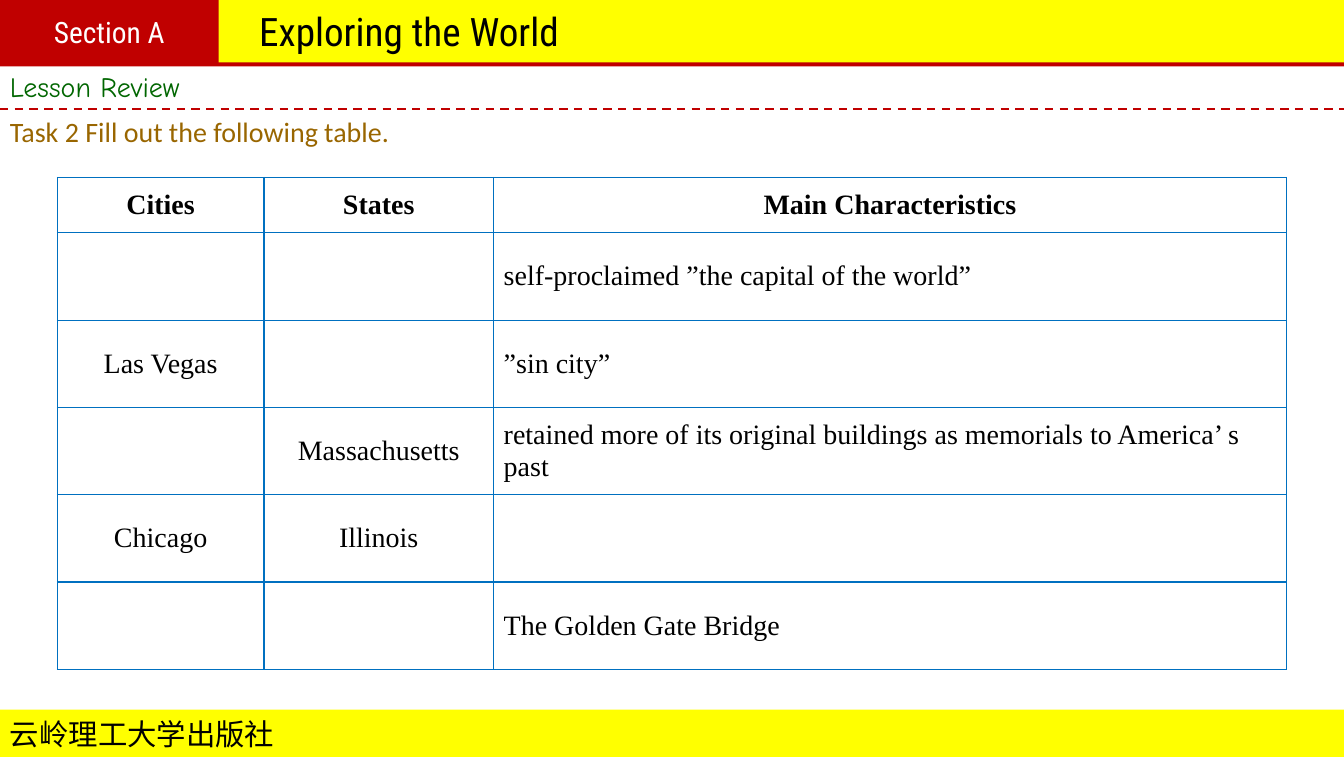
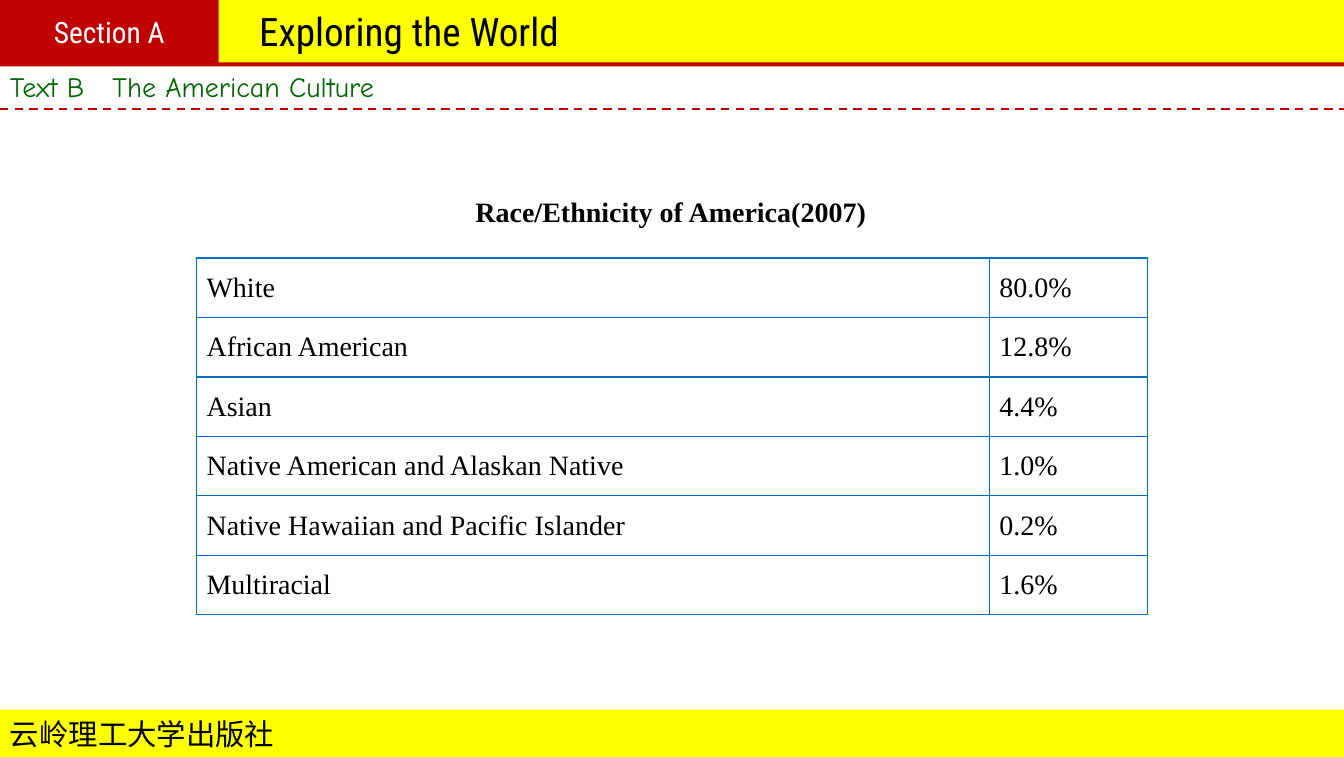
from lxml import etree
from pptx import Presentation
from pptx.dml.color import RGBColor
from pptx.enum.dml import MSO_LINE
from pptx.enum.shapes import MSO_CONNECTOR, MSO_SHAPE
from pptx.enum.text import MSO_ANCHOR, MSO_AUTO_SIZE, PP_ALIGN
from pptx.oxml.ns import qn
from pptx.util import Inches, Pt

SLIDE_W, SLIDE_H = 13.34, 7.51
HEADER_H, FOOTER_H, RULE_Y = 0.63, 0.47, 1.08
TITLE_BOX = (2.37, 0.01, 3.38, 0.59)

YELLOW = RGBColor(0xFF, 0xFF, 0x00)
RED = RGBColor(0xC0, 0x00, 0x00)
GREEN = RGBColor(0x00, 0x66, 0x00)
BROWN = RGBColor(0x99, 0x66, 0x00)
BLUE = RGBColor(0x00, 0x70, 0xC0)
BLACK = RGBColor(0x00, 0x00, 0x00)
WHITE = RGBColor(0xFF, 0xFF, 0xFF)

HEADER_FONT = "Roboto Condensed"
SUBTITLE_FONT = "Comic Neue"
TABLE_FONT = "Times New Roman"

CITY_ROWS = [
    ("Cities", "States", "Main Characteristics"),
    ("", "", "self-proclaimed ”the capital of the world”"),
    ("Las Vegas", "", "”sin city”"),
    ("", "Massachusetts",
     "retained more of its original buildings as memorials to America’ s past"),
    ("Chicago", "Illinois", ""),
    ("", "", "The Golden Gate Bridge"),
]
ETHNICITY_ROWS = [
    ("White", "80.0%"),
    ("African American", "12.8%"),
    ("Asian", "4.4%"),
    ("Native American and Alaskan Native", "1.0%"),
    ("Native Hawaiian and Pacific Islander", "0.2%"),
    ("Multiracial", "1.6%"),
]


def inches(box):
    return [Inches(length) for length in box]


def write(frame, text, size, font, color, bold=False, align=PP_ALIGN.LEFT):
    frame.text = text
    paragraph = frame.paragraphs[0]
    paragraph.alignment = align
    style = paragraph.font if not paragraph.runs else paragraph.runs[0].font
    style.size, style.name, style.bold = Pt(size), font, bold
    style.color.rgb = color


def add_band(slide, box, color):
    band = slide.shapes.add_shape(MSO_SHAPE.RECTANGLE, *inches(box))
    band.shadow.inherit = False
    band.fill.solid()
    band.fill.fore_color.rgb = color
    band.line.fill.background()
    band.text_frame.vertical_anchor = MSO_ANCHOR.MIDDLE
    return band


def add_label(slide, box, text, font, color, bold=False, wrap=False):
    frame = slide.shapes.add_textbox(*inches(box)).text_frame
    frame.word_wrap = wrap
    frame.auto_size = MSO_AUTO_SIZE.SHAPE_TO_FIT_TEXT
    write(frame, text, 20, font, color, bold)


def prepare_layout(layout):
    """Keep only the title placeholder and put it in the header."""
    for placeholder in list(layout.placeholders):
        if placeholder.placeholder_format.idx != 0:
            placeholder.element.getparent().remove(placeholder.element)
    title = layout.placeholders[0]
    title.left, title.top, title.width, title.height = inches(TITLE_BOX)


def add_frame_to_layout(slide):
    """Draw the bands and the dashed rule, then hand them to the layout."""
    footer = add_band(slide, (0, SLIDE_H - FOOTER_H, SLIDE_W, FOOTER_H), YELLOW)
    write(footer.text_frame, "云岭理工大学出版社", 21, "Arial", BLACK)
    header = add_band(slide, (0, 0, SLIDE_W, HEADER_H), YELLOW)
    header_edge = add_band(slide, (0, 0.62, SLIDE_W, 0.04), RED)
    rule = slide.shapes.add_connector(
        MSO_CONNECTOR.STRAIGHT, *inches((0, RULE_Y, SLIDE_W, RULE_Y)))
    rule.line.color.rgb = RED
    rule.line.width = Pt(1.5)
    rule.line.dash_style = MSO_LINE.DASH
    etree.SubElement(rule.element.spPr, qn("a:effectLst"))
    layout_tree = slide.slide_layout.shapes.element
    for part in (footer, header, header_edge, rule):
        layout_tree.append(part.element)


def add_header(slide, section, title, subtitle, subtitle_w):
    frame = slide.shapes.title.text_frame
    write(frame, title, 28, HEADER_FONT, BLACK, align=PP_ALIGN.CENTER)
    frame.vertical_anchor = MSO_ANCHOR.MIDDLE
    frame.word_wrap = False
    frame.auto_size = MSO_AUTO_SIZE.SHAPE_TO_FIT_TEXT
    frame.margin_left = frame.margin_right = Inches(0.12)
    frame.margin_top = frame.margin_bottom = Inches(0.06)
    section_tab = add_band(slide, (0, 0, 2.17, HEADER_H), RED)
    write(section_tab.text_frame, section, 21, HEADER_FONT, WHITE,
          align=PP_ALIGN.CENTER)
    add_label(slide, (0, 0.64, subtitle_w, 0.44), subtitle, SUBTITLE_FONT, GREEN)


def set_borders(cell, color, width):
    properties = cell._tc.get_or_add_tcPr()
    for position, side in enumerate(("a:lnL", "a:lnR", "a:lnT", "a:lnB")):
        border = etree.Element(qn(side), w=str(Pt(width)))
        fill = etree.SubElement(border, qn("a:solidFill"))
        etree.SubElement(fill, qn("a:srgbClr"), val=str(color))
        properties.insert(position, border)


def add_ruled_table(slide, box, rows, column_widths, header_h=None,
                    centered_columns=()):
    """Place a white table; header_h gives the first row its own height and bold text."""
    has_header = header_h is not None
    table = slide.shapes.add_table(
        len(rows), len(column_widths), *inches(box)).table
    table.first_row = table.horz_banding = False
    for column, width in zip(table.columns, column_widths):
        column.width = Inches(width)
    body_h = (box[3] - (header_h or 0)) / (len(rows) - has_header)
    for row_index, texts in enumerate(rows):
        is_header = has_header and row_index == 0
        table.rows[row_index].height = Inches(header_h if is_header else body_h)
        for column_index, text in enumerate(texts):
            cell = table.cell(row_index, column_index)
            centered = is_header or column_index in centered_columns
            write(cell.text_frame, text, 20, TABLE_FONT, BLACK, is_header,
                  PP_ALIGN.CENTER if centered else PP_ALIGN.LEFT)
            cell.vertical_anchor = MSO_ANCHOR.MIDDLE
            cell.fill.solid()
            cell.fill.fore_color.rgb = WHITE
            set_borders(cell, BLUE, 1)


def build_review_slide(slide):
    add_header(slide, "Section A", "Exploring the World", "Lesson Review", 2.05)
    add_label(slide, (0, 1.09, SLIDE_W, 0.44),
              "Task 2 Fill out the following table.", "Calibri", BROWN, wrap=True)
    add_ruled_table(slide, (0.57, 1.76, 12.2, 4.88), CITY_ROWS,
                    (2.05, 2.28, 7.87), header_h=0.55, centered_columns=(0, 1))


def build_culture_slide(slide):
    add_header(slide, "Section A", "Exploring the World",
               "Text B　The American Culture", 4.24)
    add_label(slide, (4.62, 1.88, 4.11, 0.44),
              "Race/Ethnicity of America(2007)", TABLE_FONT, BLACK, bold=True)
    add_ruled_table(slide, (1.95, 2.56, 9.45, 3.54), ETHNICITY_ROWS, (7.87, 1.57))


def main():
    deck = Presentation()
    deck.slide_width, deck.slide_height = Inches(SLIDE_W), Inches(SLIDE_H)
    layout = deck.slide_layouts.get_by_name("Title Only")
    prepare_layout(layout)
    review_slide = deck.slides.add_slide(layout)
    culture_slide = deck.slides.add_slide(layout)
    add_frame_to_layout(review_slide)
    build_review_slide(review_slide)
    build_culture_slide(culture_slide)
    deck.save("out.pptx")


if __name__ == "__main__":
    main()
